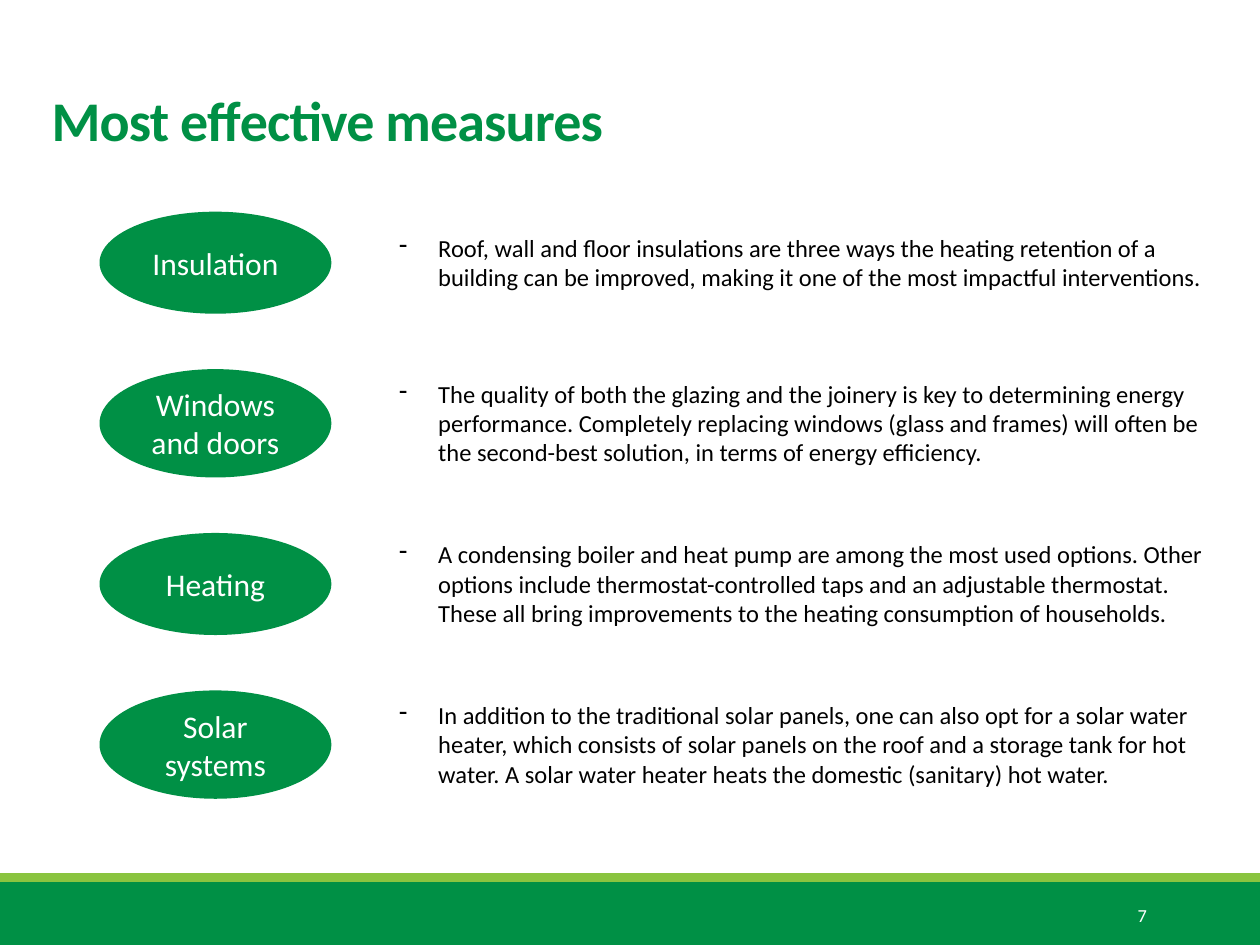
"""Build the slide on the most effective home energy measures."""
import pptx
import pptx.dml.color
import pptx.enum.shapes
import pptx.enum.text
import pptx.oxml.ns
import pptx.util
from lxml import etree

Inches = pptx.util.Inches
ALIGN = pptx.enum.text.PP_ALIGN
ANCHOR = pptx.enum.text.MSO_ANCHOR
SHAPE = pptx.enum.shapes.MSO_SHAPE

TITLE = "Most effective measures"
PAGE = "7"
MEASURES = [
    ("Insulation", 0.81, 0.57,
     "Roof, wall and floor insulations are three ways the heating retention of a building "
     "can be improved, making it one of the most impactful interventions."),
    ("Windows and doors", 0.86, 0.81,
     "The quality of both the glazing and the joinery is key to determining energy performance. "
     "Completely replacing windows (glass and frames) will often be the second-best solution, "
     "in terms of energy efficiency."),
    ("Heating", 0.81, 0.81,
     "A condensing boiler and heat pump are among the most used options. Other options include "
     "thermostat-controlled taps and an adjustable thermostat. These all bring improvements "
     "to the heating consumption of households."),
    ("Solar systems", 0.86, 0.81,
     "In addition to the traditional solar panels, one can also opt for a solar water heater, "
     "which consists of solar panels on the roof and a storage tank for hot water. "
     "A solar water heater heats the domestic (sanitary) hot water."),
]
THEME = {
    "font": "Calibri",
    "green": "009045", "lime": "8AC43F", "white": "FFFFFF", "black": "000000",
    "title": 32, "label": 18, "body": 14, "page": 10.5,
}
FIRST_CENTER, ROW_PITCH = 2.085, 1.275
LABEL_LEFT, LABEL_WIDTH = 0.79, 1.84
DETAIL_LEFT, DETAIL_WIDTH = 3.07, 6.74


def color(name):
    return pptx.dml.color.RGBColor.from_string(THEME[name])


def write(shape, text, size, ink, align=ALIGN.LEFT, anchor=ANCHOR.TOP, bold=False):
    frame = shape.text_frame
    frame.word_wrap = True
    frame.vertical_anchor = anchor
    paragraph = frame.paragraphs[0]
    paragraph.alignment = align
    run = paragraph.add_run()
    run.text = text
    run.font.name = THEME["font"]
    run.font.size = pptx.util.Pt(THEME[size])
    run.font.bold = bold
    run.font.color.rgb = color(ink)
    return paragraph


def add_filled(slide, kind, box, fill):
    shape = slide.shapes.add_shape(kind, *map(Inches, box))
    shape.shadow.inherit = False
    shape.fill.solid()
    shape.fill.fore_color.rgb = color(fill)
    shape.line.fill.background()
    return shape


def add_dash(paragraph, indent):
    properties = paragraph._p.get_or_add_pPr()
    properties.set("marL", str(Inches(indent)))
    properties.set("indent", str(-Inches(indent)))
    bullet = etree.SubElement(properties, pptx.oxml.ns.qn("a:buChar"))
    bullet.set("char", "-")


def add_title(slide):
    title = slide.shapes.title
    title.left, title.top, title.width, title.height = map(Inches, (0.31, 0.63, 9.38, 0.64))
    paragraph = write(title, TITLE, "title", "green", bold=True)
    title.text_frame.auto_size = pptx.enum.text.MSO_AUTO_SIZE.NONE
    paragraph.runs[0].font._element.set("spc", "-50")


def add_footer(slide):
    add_filled(slide, SHAPE.RECTANGLE, (0, 7, 10, 0.5), "green")
    add_filled(slide, SHAPE.RECTANGLE, (0, 6.93, 10, 0.07), "lime")
    page = slide.shapes.add_textbox(*map(Inches, (8.12, 7.06, 1.08, 0.4)))
    write(page, PAGE, "page", "white", ALIGN.RIGHT, ANCHOR.MIDDLE)


def add_measures(slide):
    for row, (name, label_height, detail_height, detail) in enumerate(MEASURES):
        center = FIRST_CENTER + row * ROW_PITCH
        label = add_filled(slide, SHAPE.OVAL,
                           (LABEL_LEFT, center - label_height / 2, LABEL_WIDTH, label_height),
                           "green")
        write(label, name, "label", "white", ALIGN.CENTER, ANCHOR.MIDDLE)
        description = slide.shapes.add_textbox(
            *map(Inches, (DETAIL_LEFT, center - detail_height / 2, DETAIL_WIDTH, detail_height)))
        add_dash(write(description, detail, "body", "black"), 0.31)


def main():
    deck = pptx.Presentation()
    deck.slide_width, deck.slide_height = Inches(10), Inches(7.5)
    slide = deck.slides.add_slide(deck.slide_layouts.get_by_name("Title Only"))
    add_footer(slide)
    add_title(slide)
    add_measures(slide)
    deck.save("out.pptx")


if __name__ == "__main__":
    main()
